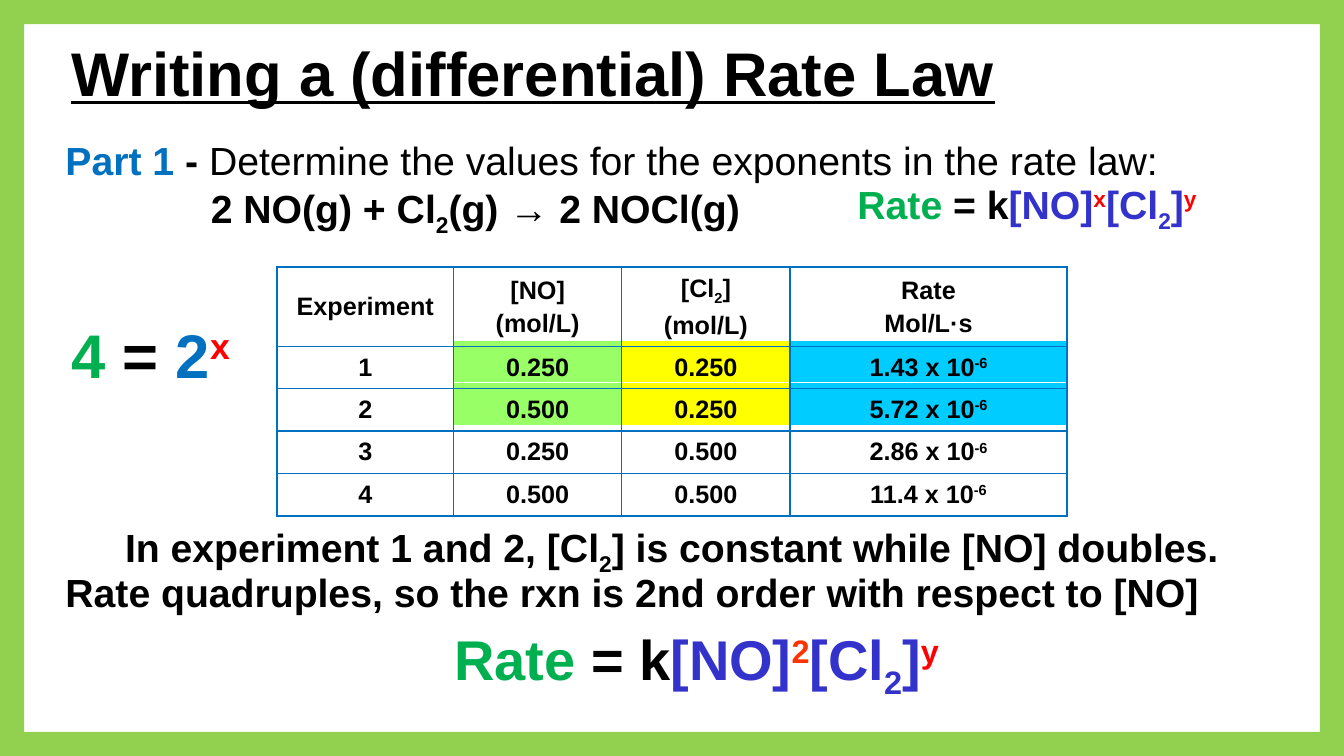
from lxml import etree
from pptx import Presentation
from pptx import util as u
from pptx.dml import color
from pptx.enum import shapes, text
from pptx.oxml import ns

COLORS = {
    "black": "000000", "white": "FFFFFF", "frame": "92D050", "border": "0070C0",
    "blue": "0070C0", "green": "00B050", "red": "FF0000", "orange": "FF3300",
    "violet": "3333CC", "lime": "99FF66", "yellow": "FFFF00", "cyan": "00CCFF",
}
FONT = "Arial"
SUB, SUP = -25, 30
COLS = [4.45, 4.24, 4.24, 6.98]
ROWS = [1.9, 1.05, 1.07, 1.07, 1.07]
HEADERS = [
    [[("Experiment",)]],
    [[("[NO]",)], [("(mol/L)",)]],
    [[("[Cl",), ("2", "black", SUB), ("]",)], [("(mol/L)",)]],
    [[("Rate",)], [("Mol/L·s",)]],
]
TRIALS = [
    ("1", "0.250", "0.250", "1.43"),
    ("2", "0.500", "0.250", "5.72"),
    ("3", "0.250", "0.500", "2.86"),
    ("4", "0.500", "0.500", "11.4"),
]


def rgb(name):
    """Return the named colour."""
    return color.RGBColor.from_string(COLORS[name])


def write(p, runs, size, align=None):
    """Fill a paragraph with (text, colour, baseline) runs."""
    p.alignment = align
    p.font.name, p.font.size, p.font.bold = FONT, u.Pt(size), True
    for content, name, base in ((*run, "black", 0)[:3] if len(run) == 1
                                else (*run, 0)[:3] for run in runs):
        r = p.add_run()
        r.text = content
        r.font.color.rgb = rgb(name)
        if base:
            r.font._element.set("baseline", str(base * 1000))


def add_text(s, box, runs, size, align=text.PP_ALIGN.LEFT, wrap=True):
    """Add a one-paragraph text box and return its frame."""
    tf = s.shapes.add_textbox(*map(u.Cm, box)).text_frame
    tf.word_wrap = wrap
    tf.auto_size = text.MSO_AUTO_SIZE.SHAPE_TO_FIT_TEXT
    write(tf.paragraphs[0], runs, size, align)
    return tf


def add_block(s, kind, box, fill, line=None):
    """Add a filled preset shape."""
    sp = s.shapes.add_shape(kind, *map(u.Cm, box))
    sp.shadow.inherit = False
    sp.fill.solid()
    sp.fill.fore_color.rgb = rgb(fill)
    if line:
        sp.line.color.rgb = rgb(line)
        sp.line.width = u.Pt(0.75)
    else:
        sp.line.fill.background()
    return sp


def add_title(s, box):
    """Add the underlined heading."""
    tf = add_text(s, box, [("Writing a (differential) Rate Law",)], 44)
    tf.auto_size = text.MSO_AUTO_SIZE.NONE
    tf.vertical_anchor = text.MSO_ANCHOR.MIDDLE
    tf.paragraphs[0].font.underline = True


def add_task(s, box):
    """Add the task line and the reaction beneath it."""
    x, y, w, h = box
    tf = add_text(s, box, [
        ("Part 1 ", "blue"), ("- ",),
        ("Determine the values for the exponents in the rate law:",)], 28)
    tf.paragraphs[0].runs[-1].font.bold = False
    add_text(s, (x + 2.64, y + 1.22, 15.88, 1.45), [
        ("2 NO(g) + Cl",), ("2", "black", SUB), ("(g) → 2 NOCl(g)",)],
        28, text.PP_ALIGN.CENTER)


def add_rate_law(s, box, size, order):
    """Add the rate law with the given (text, colour) exponent of NO."""
    add_text(s, box, [
        ("Rate ", "green"), ("= k",), ("[NO]", "violet"), (*order, SUP),
        ("[Cl", "violet"), ("2", "violet", SUB), ("]", "violet"),
        ("y", "red", SUP)], size, wrap=False)


def add_highlights(s, box):
    """Add the coloured blocks behind the first two trials."""
    x, y, w, h = box
    for col, fill in enumerate(("lime", "yellow", "cyan"), 1):
        for row in range(2):
            add_block(s, shapes.MSO_SHAPE.RECTANGLE,
                      (x + sum(COLS[:col]), y + 1.85 + row * 1.07, COLS[col], 1.07),
                      fill, "white")


def add_borders(cell):
    """Draw all four borders of a cell."""
    tcPr = cell._tc.get_or_add_tcPr()
    for i, side in enumerate(("lnL", "lnR", "lnT", "lnB")):
        ln = etree.Element(ns.qn(f"a:{side}"), w=str(u.Pt(1)))
        fill = etree.SubElement(ln, ns.qn("a:solidFill"))
        etree.SubElement(fill, ns.qn("a:srgbClr"), val=COLORS["border"])
        tcPr.insert(i, ln)


def add_trials(s, box):
    """Add the table of experiments over its highlights."""
    add_highlights(s, box)
    rows = [HEADERS] + [
        [[[(value,)]] for value in values]
        + [[[(f"{rate} x 10",), ("-6", "black", SUP)]]]
        for *values, rate in TRIALS]
    tbl = s.shapes.add_table(len(ROWS), len(COLS), *map(u.Cm, box)).table
    tbl.first_row = tbl.horz_banding = False
    for col, width in zip(tbl.columns, COLS):
        col.width = u.Cm(width)
    for row, height, contents in zip(tbl.rows, ROWS, rows):
        row.height = u.Cm(height)
        for cell, lines in zip(row.cells, contents):
            cell.fill.background()
            cell.vertical_anchor = text.MSO_ANCHOR.MIDDLE
            add_borders(cell)
            tf = cell.text_frame
            for i, runs in enumerate(lines):
                p = tf.add_paragraph() if i else tf.paragraphs[0]
                write(p, runs, 18, text.PP_ALIGN.CENTER)
                if i:
                    p.space_before = u.Pt(3.6)


def add_conclusion(s, box):
    """Add the two lines of reasoning and the resulting rate law."""
    x, y, w, h = box
    add_text(s, (x, y, w, 1.45), [
        ("In experiment 1 and 2, [Cl",), ("2", "black", SUB),
        ("] is constant while [NO] doubles.",)], 28, text.PP_ALIGN.CENTER)
    add_text(s, (x, y + 1.14, w, 1.45), [
        ("Rate quadruples, so the rxn is 2nd order with respect to [NO]",)], 28)
    add_rate_law(s, (x + 9.8, y + 2.54, 13.08, 1.96), 40, ("2", "orange"))


def add_frame(s, box):
    """Add the green frame around the slide."""
    sp = add_block(s, shapes.MSO_SHAPE.FRAME, box, "frame")
    sp.adjustments[0] = 0.032


def main():
    """Build and save the slide."""
    prs = Presentation()
    prs.slide_width, prs.slide_height = u.Cm(33.87), u.Cm(19.05)
    s = prs.slides.add_slide(prs.slide_layouts[6])
    add_task(s, (1.4, 3.3, 31.06, 11.02))
    add_trials(s, (6.98, 6.73, sum(COLS), sum(ROWS)))
    add_frame(s, (0, 0, 33.87, 19.05))
    add_rate_law(s, (21.36, 4.42, 9.32, 1.45), 28, ("x", "red"))
    add_conclusion(s, (1.4, 13.06, 31.06, 4.5))
    add_title(s, (1.55, 0.58, 26.82, 2.44))
    add_text(s, (1.55, 7.85, 5.26, 2.13), [
        ("4 ", "green"), ("= ",), ("2", "blue"), ("x", "red", SUP)], 44)
    prs.save("out.pptx")


if __name__ == "__main__":
    main()
